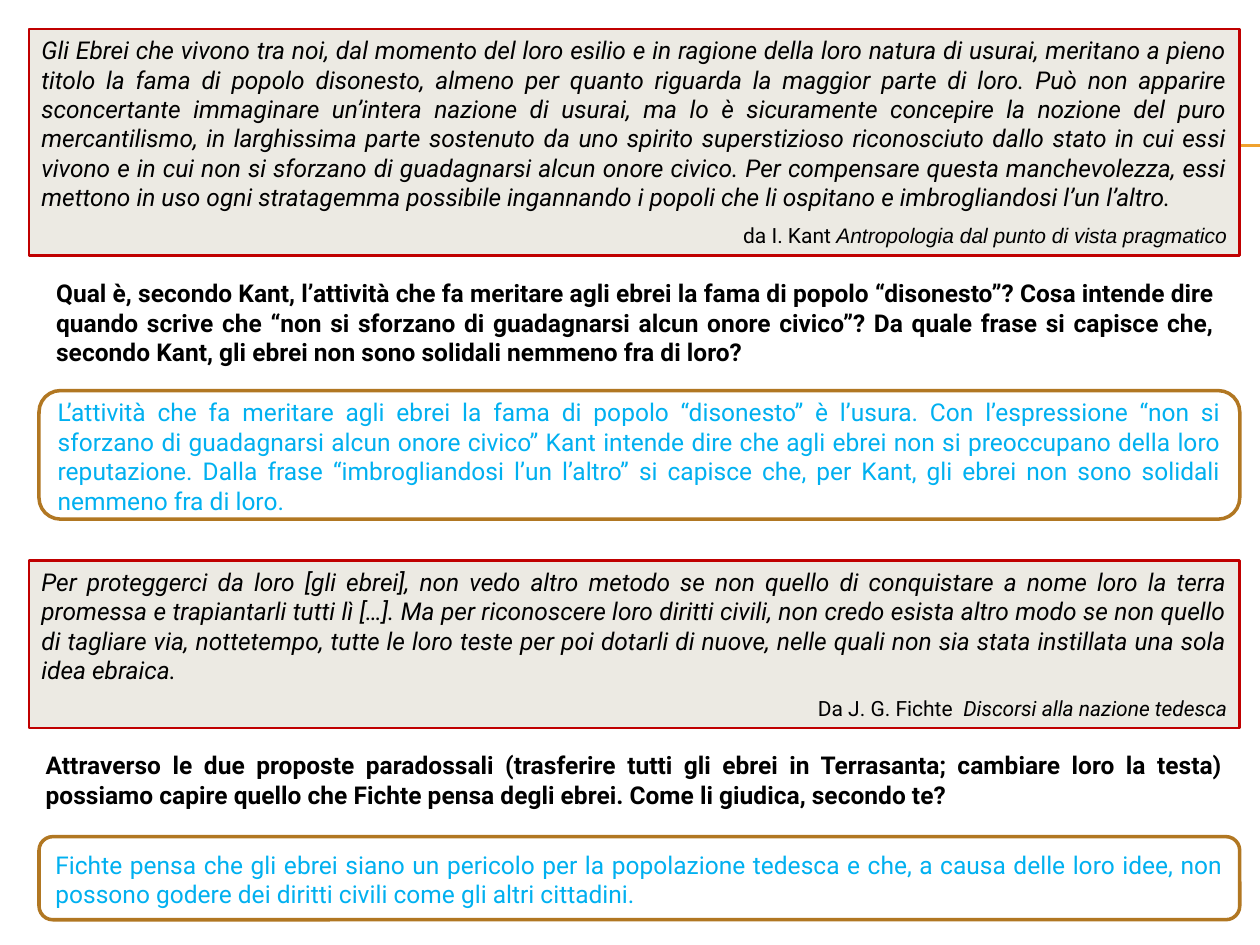
from lxml.etree import SubElement
from pptx import Presentation
from pptx.dml.color import RGBColor
from pptx.enum.shapes import MSO_CONNECTOR, MSO_SHAPE
from pptx.enum.text import MSO_ANCHOR, MSO_AUTO_SIZE, PP_ALIGN
from pptx.oxml.ns import qn
from pptx.util import Inches, Pt

BLACK = RGBColor(0x00, 0x00, 0x00)
WHITE = RGBColor(0xFF, 0xFF, 0xFF)
CREAM = RGBColor(0xEC, 0xEA, 0xE3)
RED = RGBColor(0xC0, 0x00, 0x00)
BROWN = RGBColor(0xB1, 0x77, 0x22)
BLUE = RGBColor(0x00, 0xB0, 0xF0)
GOLD = RGBColor(0xF0, 0xA2, 0x2E)

RULES = [1.15, 1.16]

QUOTES = [
    ((0.23, 0.23, 9.61, 1.8),
     "Gli Ebrei che vivono tra noi, dal momento del loro esilio e in ragione della loro natura di usurai, "
     "meritano a pieno titolo la fama di popolo disonesto, almeno per quanto riguarda la maggior parte di loro. "
     "Può non apparire sconcertante immaginare un’intera nazione di usurai, ma lo è sicuramente concepire la "
     "nozione del puro mercantilismo, in larghissima parte sostenuto da uno spirito superstizioso riconosciuto "
     "dallo stato in cui essi vivono e in cui non si sforzano di guadagnarsi alcun onore civico. Per compensare "
     "questa manchevolezza, essi mettono in uso ogni stratagemma possibile ingannando i popoli che li ospitano "
     "e imbrogliandosi l’un l’altro.",
     "da I. Kant ", "Antropologia dal punto di vista pragmatico", "Arial"),
    ((0.23, 4.45, 9.61, 1.33),
     "Per proteggerci da loro [gli ebrei], non vedo altro metodo se non quello di conquistare a nome loro la "
     "terra promessa e trapiantarli tutti lì […]. Ma per riconoscere loro diritti civili, non credo esista altro "
     "modo se non quello di tagliare via, nottetempo, tutte le loro teste per poi dotarli di nuove, nelle quali "
     "non sia stata instillata una sola idea ebraica.",
     "Da J. G. Fichte  ", "Discorsi alla nazione tedesca", "Roboto"),
]

ASKS = [
    ((0.31, 2.19, 9.47, 0.78),
     "Qual è, secondo Kant, l’attività che fa meritare agli ebrei la fama di popolo “disonesto”? Cosa intende "
     "dire quando scrive che “non si sforzano di guadagnarsi alcun onore civico”? Da quale frase si capisce "
     "che, secondo Kant, gli ebrei non sono solidali nemmeno fra di loro?"),
    ((0.23, 5.86, 9.61, 0.7),
     "Attraverso le due proposte paradossali (trasferire tutti gli ebrei in Terrasanta; cambiare loro la testa) "
     "possiamo capire quello che Fichte pensa degli ebrei. Come li giudica, secondo te?"),
]

REPLIES = [
    ((0.31, 3.1, 9.53, 1.02),
     "L’attività che fa meritare agli ebrei la fama di popolo “disonesto” è l’usura. Con l’espressione “non si "
     "sforzano di guadagnarsi alcun onore civico” Kant intende dire che agli ebrei non si preoccupano della "
     "loro reputazione. Dalla frase “imbrogliandosi l’un l’altro” si capisce che, per Kant, gli ebrei non sono "
     "solidali nemmeno fra di loro."),
    ((0.31, 6.64, 9.53, 0.66),
     "Fichte pensa che gli ebrei siano un pericolo per la popolazione tedesca e che, a causa delle loro idee, "
     "non possono godere dei diritti civili come gli altri cittadini."),
]


def write(para, text, size=14, font="Roboto", color=BLACK, bold=False, italic=False):
    run = para.add_run()
    run.text = text
    run.font.size = Pt(size)
    run.font.name = font
    run.font.color.rgb = color
    run.font.bold = bold
    run.font.italic = italic


def add_box(slide, kind, place, fill=None, line=None, width=1, top=0.05, base=0.05):
    box = slide.shapes.add_shape(kind, *map(Inches, place))
    box.shadow.inherit = False
    if fill is None:
        box.fill.background()
    else:
        box.fill.solid()
        box.fill.fore_color.rgb = fill
    if line is None:
        box.line.fill.background()
    else:
        box.line.color.rgb = line
        box.line.width = Pt(width)
    frame = box.text_frame
    frame.word_wrap = True
    frame.margin_left = frame.margin_right = Inches(0.1)
    frame.margin_top = Inches(top)
    frame.margin_bottom = Inches(base)
    frame.vertical_anchor = MSO_ANCHOR.MIDDLE
    frame.paragraphs[0].alignment = PP_ALIGN.JUSTIFY
    return frame


def add_rule(slide, y):
    rule = slide.shapes.add_connector(
        MSO_CONNECTOR.STRAIGHT, Inches(0.56), Inches(y), Inches(10), Inches(y))
    rule.line.color.rgb = GOLD
    rule.line.width = Pt(0.75)
    SubElement(rule._element.spPr, qn("a:effectLst"))


def add_quote(slide, place, text, author, title, font):
    frame = add_box(slide, MSO_SHAPE.RECTANGLE, place, fill=CREAM, line=RED, width=1.5)
    frame.vertical_anchor = MSO_ANCHOR.TOP
    frame.auto_size = MSO_AUTO_SIZE.SHAPE_TO_FIT_TEXT
    body = frame.paragraphs[0]
    write(body, text, italic=True)
    credit = frame.add_paragraph()
    credit.alignment = PP_ALIGN.RIGHT
    write(credit, author, size=12)
    write(credit, title, size=12, font=font, italic=True)
    body.space_after = credit.space_after = Pt(6)


def main():
    deck = Presentation()
    deck.slide_width, deck.slide_height = Inches(10), Inches(7.5)
    slide = deck.slides.add_slide(deck.slide_layouts[6])
    for y in RULES:
        add_rule(slide, y)
    for quote in QUOTES:
        add_quote(slide, *quote)
    for place, text in ASKS:
        frame = add_box(slide, MSO_SHAPE.ROUNDED_RECTANGLE, place, top=0.03, base=0.07)
        write(frame.paragraphs[0], text, bold=True)
    for place, text in REPLIES:
        frame = add_box(slide, MSO_SHAPE.ROUNDED_RECTANGLE, place,
                        fill=WHITE, line=BROWN, width=2, top=0.02, base=0)
        write(frame.paragraphs[0], text, color=BLUE)
    deck.save("out.pptx")


if __name__ == "__main__":
    main()
